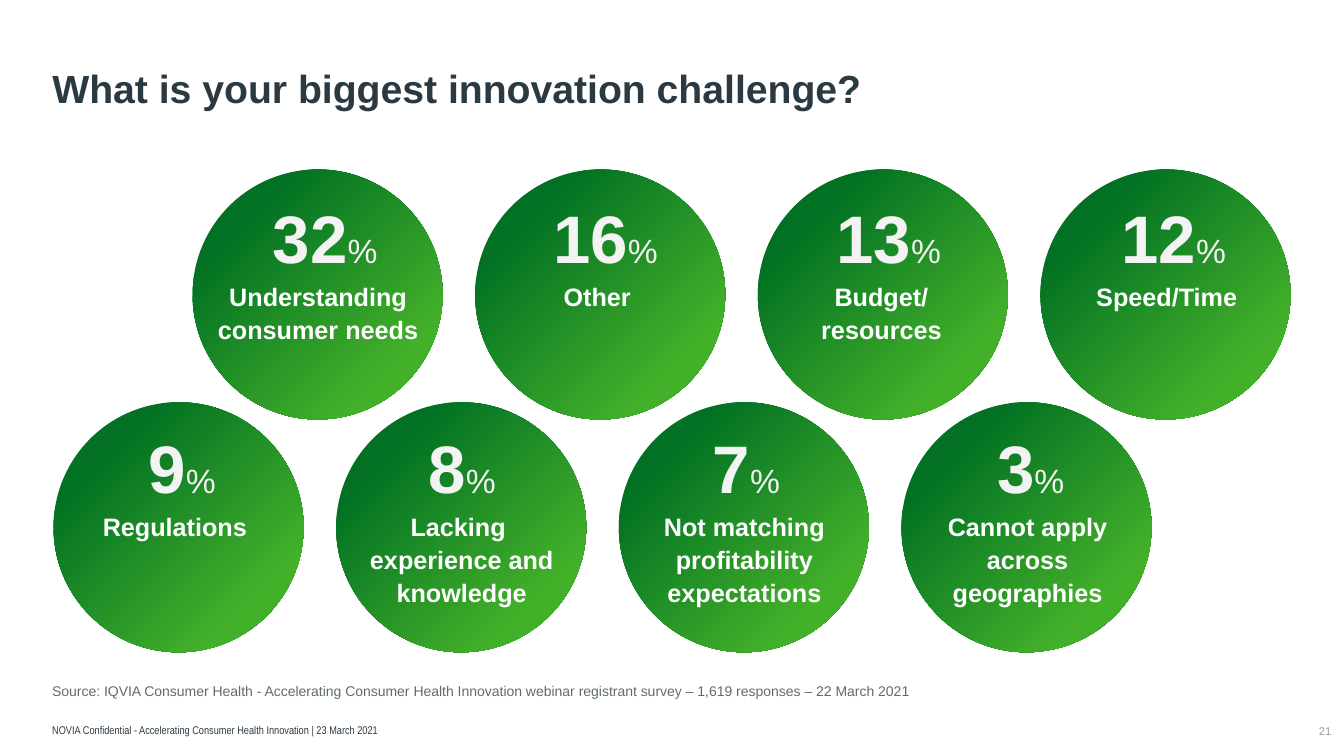
from pptx import Presentation
from pptx.dml.color import RGBColor
from pptx.enum.shapes import MSO_SHAPE
from pptx.enum.text import MSO_ANCHOR, MSO_AUTO_SIZE, PP_ALIGN
from pptx.util import Pt

OVAL = MSO_SHAPE.OVAL
TOP, MIDDLE, BOTTOM = MSO_ANCHOR.TOP, MSO_ANCHOR.MIDDLE, MSO_ANCHOR.BOTTOM
LEFT, CENTER, RIGHT = PP_ALIGN.LEFT, PP_ALIGN.CENTER, PP_ALIGN.RIGHT
NO_FIT = MSO_AUTO_SIZE.NONE

COLORS = {
    "ink": "2B3A42",
    "source": "606B71",
    "number": "959CA0",
    "value": "F3F3F3",
    "label": "FFFFFF",
    "dark_green": "027123",
    "light_green": "43B02A",
}

DIAMETER = 178.6
PITCH = 201.9
LABEL_DROP = 61.9

# Each row: circle left, circle top, text top, then (value, label, value left, label left).
ROWS = [
    (137.5, 121, 136.8, [
        ("32", "Understanding consumer needs", 172.8, 146.2),
        ("16", "Other", 373, 345.6),
        ("13", "Budget/\nresources", 575.3, 548.6),
        ("12", "Speed/Time", 779, 752.4),
    ]),
    (38.2, 287.3, 301, [
        ("9", "Regulations", 70.6, 43.9),
        ("8", "Lacking \vexperience and knowledge", 270.7, 248.8),
        ("7", "Not matching profitability expectations", 473.8, 450.7),
        ("3", "Cannot apply across geographies", 676.8, 653),
    ]),
]


def rgb(name):
    return RGBColor.from_string(COLORS[name])


def add_run(p, text, size=18, color="ink", bold=False, font="Arial"):
    r = p.add_run()
    r.text = text
    r.font.size = Pt(size)
    r.font.bold = bold
    r.font.name = font
    r.font.color.rgb = rgb(color)


def write(tf, text, align=LEFT, anchor=TOP, spacing=None, inset=True, **font):
    tf.word_wrap = True
    tf.auto_size = NO_FIT
    tf.vertical_anchor = anchor
    if not inset:
        tf.margin_left = tf.margin_right = tf.margin_top = tf.margin_bottom = 0
    for i, line in enumerate(text.split("\n")):
        p = tf.add_paragraph() if i else tf.paragraphs[0]
        p.alignment = align
        if spacing:
            p.line_spacing = spacing
        for j, part in enumerate(line.split("\v")):
            if j:
                p.add_line_break()
            add_run(p, part, **font)


def add_text(s, x, y, w, h, text, **style):
    tf = s.shapes.add_textbox(Pt(x), Pt(y), Pt(w), Pt(h)).text_frame
    write(tf, text, **style)
    return tf


def add_title(s, text):
    title = s.shapes.title
    title.left, title.top = Pt(30.2), Pt(23)
    title.width, title.height = Pt(893), Pt(60.5)
    write(title.text_frame, text, anchor=BOTTOM, spacing=0.9, size=28, bold=True)


def add_circle(s, x, y):
    sp = s.shapes.add_shape(OVAL, Pt(x), Pt(y), Pt(DIAMETER), Pt(DIAMETER))
    sp.shadow.inherit = False
    sp.line.fill.background()
    sp.fill.gradient()
    sp.fill.gradient_angle = 315
    stops = [(0.2, "dark_green"), (0.8, "light_green")]
    for stop, (position, color) in zip(sp.fill.gradient_stops, stops):
        stop.position = position
        stop.color.rgb = rgb(color)


def add_answer(s, y, value, label, value_x, label_x):
    add_text(s, label_x, y + LABEL_DROP, 162, 83.5, label, align=CENTER,
             spacing=1.1, inset=False, color="label", bold=True)
    tf = add_text(s, value_x, y, 118.8, 65.5, value, align=CENTER,
                  size=48, color="value", bold=True)
    add_run(tf.paragraphs[0], "%", size=24, color="value")


def main():
    prs = Presentation()
    prs.slide_width, prs.slide_height = Pt(960), Pt(540)
    s = prs.slides.add_slide(prs.slide_layouts[5])
    add_title(s, "What is your biggest innovation challenge?")
    for left, top, text_top, answers in ROWS:
        for i, answer in enumerate(answers):
            add_circle(s, left + i * PITCH, top)
            add_answer(s, text_top, *answer)
    add_text(s, 30.2, 483.8, 705.6, 19.4,
             "Source: IQVIA Consumer Health - Accelerating Consumer Health Innovation "
             "webinar registrant survey – 1,619 responses – 22 March 2021",
             size=10, color="source")
    add_text(s, 30.2, 503.3, 730.8, 26.6,
             "NOVIA Confidential - Accelerating Consumer Health Innovation | 23 March 2021",
             anchor=BOTTOM, size=8, font="Arial Narrow")
    add_text(s, 923, 515.5, 28.1, 13.7, "21", align=RIGHT, anchor=MIDDLE,
             inset=False, size=8, color="number")
    prs.save("out.pptx")


if __name__ == "__main__":
    main()
